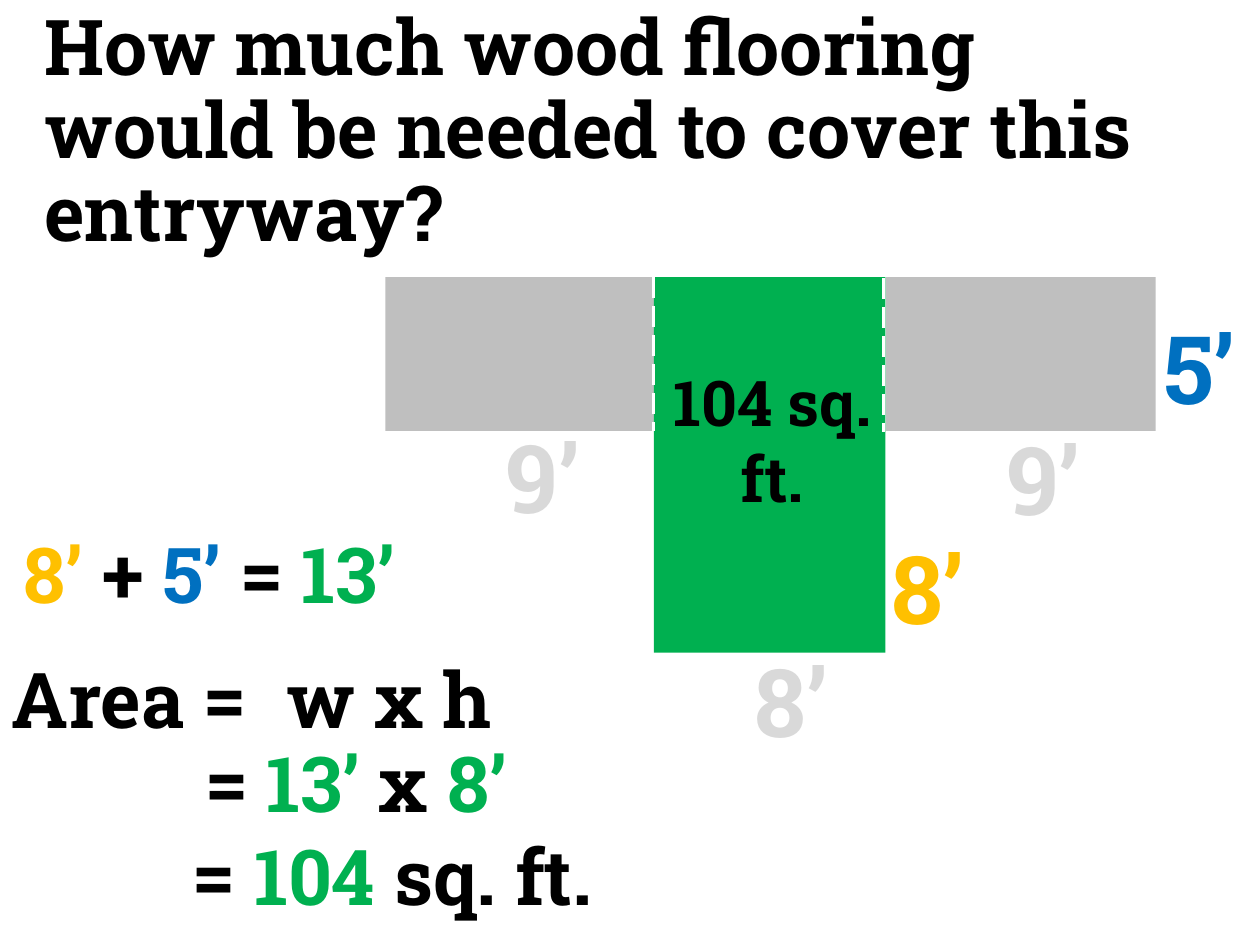
from lxml import etree
from pptx import Presentation, util as u
from pptx.dml.color import RGBColor
from pptx.enum import dml, shapes, text
from pptx.oxml.ns import qn

INK = {"black": "000000", "green": "00B050", "gold": "FFC000", "blue": "0070C0",
       "pale": "D9D9D9", "gray": "BFBFBF", "white": "FFFFFF"}


def write(runs, x, y, w, h, size=44, align="LEFT", inset=0, space=None, tab=None):
    """Add a one-paragraph text box; runs are (words, colour) pairs."""
    box = slide.shapes.add_textbox(u.Cm(x), u.Cm(y), u.Cm(w), u.Cm(h))
    frame = box.text_frame
    frame.word_wrap = True
    frame.margin_left = frame.margin_right = u.Cm(inset)
    frame.margin_top = frame.margin_bottom = u.Cm(inset / 2)
    para = frame.paragraphs[0]
    para.alignment = getattr(text.PP_ALIGN, align)
    if space:
        para.line_spacing = space
    if tab:
        stops = etree.SubElement(para._p.get_or_add_pPr(), qn("a:tabLst"))
        etree.SubElement(stops, qn("a:tab"), pos=str(u.Cm(tab)), algn="l")
    for words, ink in runs:
        run = para.add_run()
        run.text = words
        run.font.name = "Roboto Slab"
        run.font.size = u.Pt(size)
        run.font.bold = True
        run.font.color.rgb = RGBColor.from_string(INK[ink])


deck = Presentation()
deck.slide_width, deck.slide_height = u.Cm(25.4), u.Cm(19.05)
slide = deck.slides.add_slide(deck.slide_layouts[6])

# Working steps
write([("Area =\tw x h", "black")], 0.23, 13.13, 10.95, 1.88, tab=5.54)
write([("= ", "black"), ("13’ ", "green"), ("x ", "black"), ("8’", "green")],
      4.14, 14.83, 9.4, 1.88)
write([("= ", "black"), ("104", "green"), (" sq. ft.", "black")],
      3.89, 16.71, 9, 1.88)
write([("8’ ", "gold"), ("+ ", "black"), ("5’ ", "blue"), ("= ", "black"),
       ("13’", "green")], 0.48, 10.62, 8.6, 1.88)

# Floor plan: two wings and the centre
for x, w, h, ink in [(7.77, 5.44, 3.1, "gray"), (17.86, 5.44, 3.1, "gray"),
                     (13.18, 4.67, 7.57, "green")]:
    room = slide.shapes.add_shape(shapes.MSO_SHAPE.RECTANGLE,
                                  u.Cm(x), u.Cm(5.59), u.Cm(w), u.Cm(h))
    room.shadow.inherit = False
    room.fill.solid()
    room.fill.fore_color.rgb = RGBColor.from_string(INK[ink])
    room.line.fill.background()

# Dashed seams
for x, y in [(13.18, 5.59), (17.81, 5.61)]:
    seam = slide.shapes.add_connector(shapes.MSO_CONNECTOR.STRAIGHT,
                                      u.Cm(x), u.Cm(y), u.Cm(x), u.Cm(y + 3.1))
    seam.line.color.rgb = RGBColor.from_string(INK["white"])
    seam.line.width = u.Pt(1.5)
    seam.line.dash_style = dml.MSO_LINE.LONG_DASH
    etree.SubElement(seam._element.spPr, qn("a:effectLst"))

# Side lengths
for words, ink, x, y, w in [("8’", "gold", 17.58, 10.57, 2.26),
                            ("9’", "pale", 19.81, 8.36, 2.44),
                            ("9’", "pale", 9.73, 8.33, 2.44),
                            ("5’", "blue", 22.96, 6.12, 2.44),
                            ("8’", "pale", 14.5, 12.83, 2.9)]:
    write([(words, ink)], x, y, w, 2.57, size=54, align="CENTER", inset=0.25)

# Question and answer
write([("How much wood flooring would be needed to cover this entryway?", "black")],
      0.64, 0.05, 23.29, 1.83, inset=0.25, space=0.9)
write([("104 sq. ft.", "black")], 13.21, 7.21, 4.72, 3.33,
      size=36, align="CENTER", inset=0.25)

deck.save("out.pptx")
